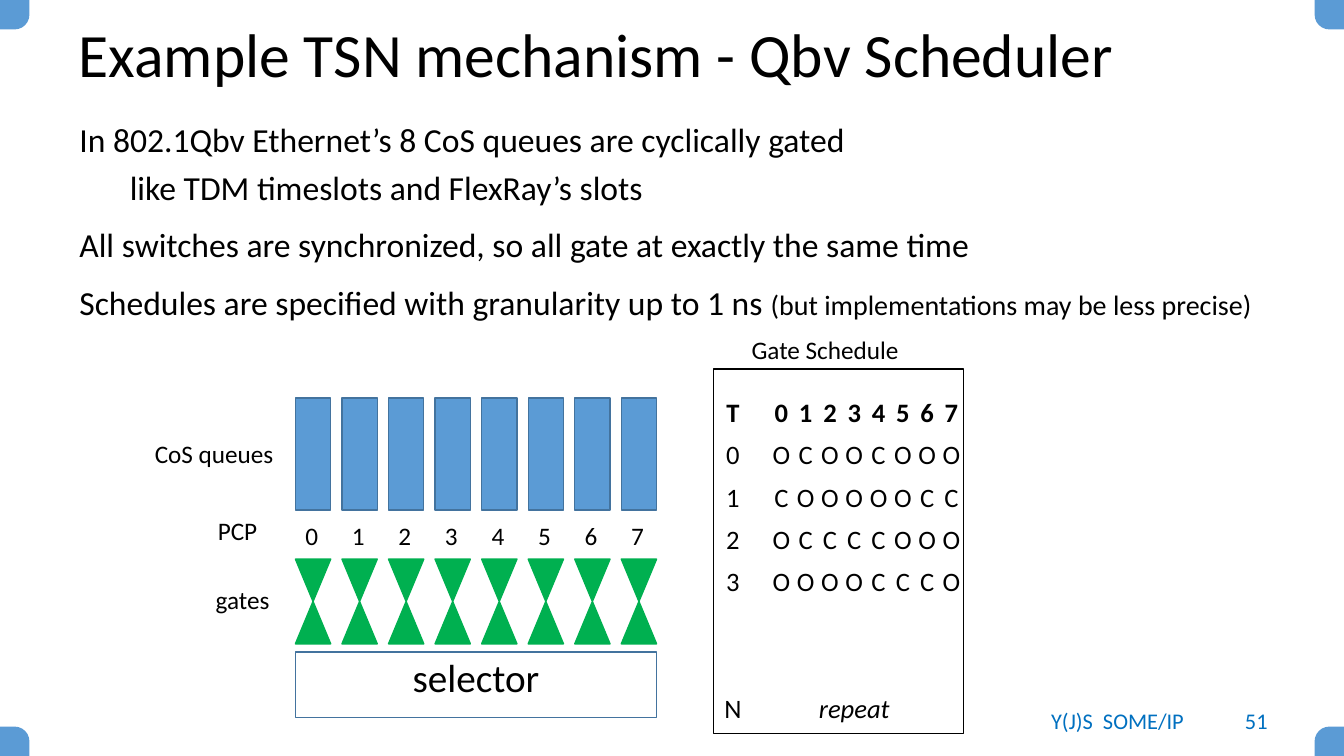
from collections import namedtuple

from lxml.etree import SubElement
from pptx import Presentation
from pptx.dml.color import RGBColor
from pptx.enum.shapes import MSO_SHAPE
from pptx.enum.text import MSO_ANCHOR, MSO_AUTO_SIZE, PP_ALIGN
from pptx.oxml.ns import qn
from pptx.util import Pt

Box = namedtuple("Box", "left top width height")

FONT = "Calibri"
PLAIN_TABLE_STYLE = "{2D5ABB26-0587-4C30-8999-92F81FD0307C}"
COLORS = {
    "text": "000000",
    "accent": "5B9BD5",
    "outline": "43739E",
    "gate": "00B050",
    "footer": "0070C0",
}
SLIDE = Box(0, 0, 960, 540)
STATEMENTS = [
    ("In 802.1Qbv Ethernet’s 8 CoS queues are cyclically gated", 6, 0),
    ("like TDM timeslots and FlexRay’s slots", 6, 36),
    ("All switches are synchronized, so all gate at exactly the same time", 12, 0),
    ("Schedules are specified with granularity up to 1 ns ", 12, 0),
]
REMARK = "(but implementations may be less precise)"
QUEUE_COUNT = 8
GATE_STATES = ["OCOOCOOO", "COOOOOCC", "OCCCCOOO", "OOOOCCCO"]


def color(name):
    return RGBColor.from_string(COLORS[name])


def points(box):
    return [Pt(length) for length in box]


def style(paragraph, size, align=PP_ALIGN.LEFT, tint="text", bold=False, italic=False):
    paragraph.alignment = align
    font = paragraph.font
    font.name = FONT
    font.size = Pt(size)
    font.bold = bold
    font.italic = italic
    font.color.rgb = color(tint)


def add_label(slide, box, text, size=18, align=PP_ALIGN.LEFT, tint="text",
              anchor=MSO_ANCHOR.TOP):
    frame = slide.shapes.add_textbox(*points(box)).text_frame
    frame.word_wrap = True
    frame.vertical_anchor = anchor
    frame.text = text
    style(frame.paragraphs[0], size, align, tint)


def add_block(slide, preset, box, fill=None, line=None):
    block = slide.shapes.add_shape(preset, *points(box))
    block.shadow.inherit = False
    if fill:
        block.fill.solid()
        block.fill.fore_color.rgb = color(fill)
    else:
        block.fill.background()
    if line:
        block.line.color.rgb = color(line)
        block.line.width = Pt(1)
    else:
        block.line.fill.background()
    return block


def place(placeholder, box):
    placeholder.left, placeholder.top, placeholder.width, placeholder.height = points(box)
    frame = placeholder.text_frame
    frame.word_wrap = True
    frame.auto_size = MSO_AUTO_SIZE.NONE
    return frame


def draw_corners(slide, box):
    side = 21
    right = box.left + box.width - side
    bottom = box.top + box.height - side
    corners = [(box.left, box.top, 90), (right, box.top, 180),
               (right, bottom, 270), (box.left, bottom, 0)]
    for left, top, rotation in corners:
        corner = add_block(slide, MSO_SHAPE.ROUND_1_RECTANGLE,
                           Box(left, top, side, side), "accent")
        corner.adjustments[0] = 0.5
        corner.rotation = rotation


def fill_title(slide, box):
    frame = place(slide.shapes.title, box)
    frame.vertical_anchor = MSO_ANCHOR.MIDDLE
    frame.text = "Example TSN mechanism - Qbv Scheduler"
    style(frame.paragraphs[0], 44)
    frame.paragraphs[0].line_spacing = 0.9


def fill_statements(slide, box):
    frame = place(slide.placeholders[1], box)
    frame.text = "\n".join(text for text, _, _ in STATEMENTS)
    for paragraph, (_, space, indent) in zip(frame.paragraphs, STATEMENTS):
        style(paragraph, 24)
        paragraph.space_before = Pt(space)
        properties = paragraph._p.get_or_add_pPr()
        properties.set("marL", str(Pt(indent)))
        properties.set("indent", "0")
        bullet = SubElement(properties, qn("a:buNone"))
        properties.find(qn("a:defRPr")).addprevious(bullet)
    remark = frame.paragraphs[-1].add_run()
    remark.text = REMARK
    remark.font.size = Pt(20)


def draw_queues(slide, box):
    lane_width = 25.2
    pitch = (box.width - lane_width) / (QUEUE_COUNT - 1)
    for queue in range(QUEUE_COUNT):
        left = box.left + queue * pitch
        add_block(slide, MSO_SHAPE.RECTANGLE,
                  Box(left, box.top, lane_width, 80), "accent", "outline")
        add_label(slide, Box(left, box.top + 83.5, lane_width, 29), str(queue))
        add_block(slide, MSO_SHAPE.FLOWCHART_COLLATE,
                  Box(left, box.top + 115, lane_width, 60.5), "gate", "gate")

    for text, left, top, width in [("CoS queues", -107.5, 25.2, 102),
                                   ("PCP", -62.5, 80.4, 63),
                                   ("gates", -64, 129.6, 63)]:
        add_label(slide, Box(box.left + left, box.top + top, width, 29), text)

    selector = add_block(slide, MSO_SHAPE.RECTANGLE,
                         Box(box.left, box.top + 181.4, box.width, box.height - 181.4),
                         line="outline")
    frame = selector.text_frame
    frame.margin_top = Pt(0.7)
    frame.vertical_anchor = MSO_ANCHOR.TOP
    frame.text = "selector"
    style(frame.paragraphs[0], 28, PP_ALIGN.CENTER)


def draw_schedule(slide, box):
    add_block(slide, MSO_SHAPE.RECTANGLE, box, line="text")
    add_label(slide, Box(box.left + 20, box.top - 28.5, 138, 29), "Gate Schedule")
    queue_numbers = [str(queue) for queue in range(QUEUE_COUNT)]
    rows = [["T", "", *queue_numbers]]
    rows += [[str(slot), "", *states] for slot, states in enumerate(GATE_STATES)]
    rows += [[], [], ["N", "repeat"]]
    columns = len(rows[0])
    grid = Box(box.left + 3, box.top + 16.5, 173.5, 30.3 * len(rows))
    table = slide.shapes.add_table(len(rows), columns, *points(grid)).table
    table.first_row = False
    table.horz_banding = False
    table._tbl.tblPr.find(qn("a:tableStyleId")).text = PLAIN_TABLE_STYLE
    last = len(rows) - 1
    table.cell(last, 1).merge(table.cell(last, columns - 1))
    for r, row in enumerate(rows):
        for c in range(columns):
            cell = table.cell(r, c)
            cell.fill.background()
            cell.margin_left = Pt(4)
            cell.margin_right = 0
            cell.text = row[c] if c < len(row) else ""
            style(cell.text_frame.paragraphs[0], 19, PP_ALIGN.CENTER,
                  bold=r == 0, italic=cell.text == "repeat")


def draw_footer(slide, box):
    number_width = 49
    add_label(slide, Box(box.left, box.top, 142.5, box.height), "Y(J)S  SOME/IP",
              16, PP_ALIGN.CENTER, "footer", MSO_ANCHOR.MIDDLE)
    add_label(slide, Box(box.left + box.width - number_width, box.top,
                         number_width, box.height), "51",
              16, PP_ALIGN.RIGHT, "footer", MSO_ANCHOR.MIDDLE)


def main():
    deck = Presentation()
    deck.slide_width = Pt(SLIDE.width)
    deck.slide_height = Pt(SLIDE.height)
    slide = deck.slides.add_slide(deck.slide_layouts[1])
    draw_corners(slide, SLIDE)
    fill_title(slide, Box(49, 15, 862.5, 52))
    fill_statements(slide, Box(49.5, 81, 862.5, 411))
    draw_queues(slide, Box(211, 284.4, 258, 228.2))
    draw_schedule(slide, Box(509.8, 263.5, 178.5, 260.6))
    draw_footer(slide, Box(727, 500.5, 185.5, 29))
    deck.save("out.pptx")


if __name__ == "__main__":
    main()
